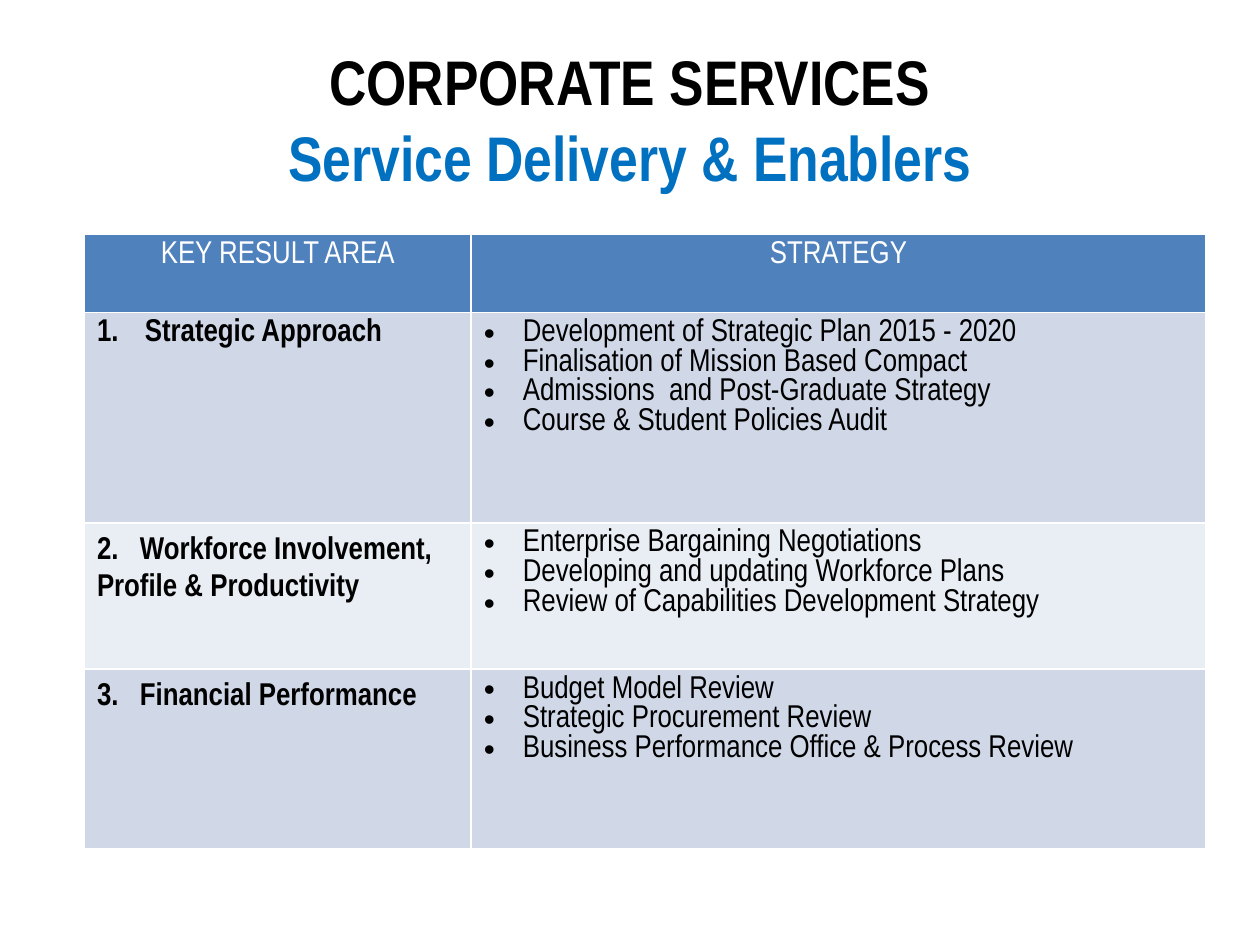
from lxml.etree import SubElement
from pptx import Presentation
from pptx.dml.color import RGBColor
from pptx.enum.text import MSO_ANCHOR, PP_ALIGN
from pptx.oxml.ns import qn
from pptx.util import Inches, Pt

FONT = "Arial Narrow"
TITLE = [("CORPORATE SERVICES", "000000"), ("Service Delivery & Enablers", "0070C0")]
HEADERS = ["KEY RESULT AREA", "STRATEGY"]
AREAS = [
    ("Strategic Approach", [
        "Development of Strategic Plan 2015 - 2020",
        "Finalisation of Mission Based Compact",
        "Admissions  and Post-Graduate Strategy",
        "Course & Student Policies Audit",
    ]),
    ("2.\tWorkforce Involvement, Profile & Productivity", [
        "Enterprise Bargaining Negotiations",
        "Developing and updating Workforce Plans",
        "Review of Capabilities Development Strategy",
    ]),
    ("3.\tFinancial Performance", [
        "Budget Model Review",
        "Strategic Procurement Review",
        "Business Performance Office & Process Review",
    ]),
]
COL_WIDTHS = [3.07, 5.83]
ROW_HEIGHTS = [0.62, 1.67, 1.16, 1.43]
HEADER_FILL = "4F81BD"
BAND_FILLS = ["D0D8E8", "E9EDF4"]


def rgb(value):
    return RGBColor.from_string(value)


def style(p, size, color, bold=False):
    for r in p.runs:
        r.font.name = FONT
        r.font.size = Pt(size)
        r.font.bold = bold
        r.font.color.rgb = rgb(color)


def add_marker(p, indent, tag, **attrs):
    pPr = p._p.get_or_add_pPr()
    pPr.set("marL", str(Inches(indent)))
    pPr.set("indent", str(-Inches(indent)))
    if tag == "a:buChar":
        SubElement(pPr, qn("a:buFont"), typeface="Arial")
    SubElement(pPr, qn(tag), **attrs)


def add_tab(p, pos):
    tabs = SubElement(p._p.get_or_add_pPr(), qn("a:tabLst"))
    SubElement(tabs, qn("a:tab"), pos=str(Inches(pos)), algn="l")


def fill_cell(cell, color):
    cell.fill.solid()
    cell.fill.fore_color.rgb = rgb(color)


def add_title(s):
    tf = s.shapes.add_textbox(Inches(0.75), Inches(0.19), Inches(8.5), Inches(1.5)).text_frame
    tf.word_wrap = True
    tf.vertical_anchor = MSO_ANCHOR.MIDDLE
    tf.text = "\n".join(text for text, _ in TITLE)
    for p, (_, color) in zip(tf.paragraphs, TITLE):
        p.alignment = PP_ALIGN.CENTER
        style(p, 36, color, True)


def add_area(cell, text):
    p = cell.text_frame.paragraphs[0]
    p.text = text
    if "\t" in text:
        add_tab(p, 0.34)
        p.line_spacing = 1.25
    else:
        add_marker(p, 0.38, "a:buAutoNum", type="arabicPeriod")
    style(p, 18, "000000", True)


def add_strategies(cell, items):
    cell.text_frame.text = "\n".join(items)
    for p in cell.text_frame.paragraphs:
        add_marker(p, 0.31, "a:buChar", char="•")
        style(p, 18, "000000")


def add_areas_table(s):
    table = s.shapes.add_table(len(ROW_HEIGHTS), len(COL_WIDTHS), Inches(0.67), Inches(1.86),
                               Inches(sum(COL_WIDTHS)), Inches(sum(ROW_HEIGHTS))).table
    for col, width in zip(table.columns, COL_WIDTHS):
        col.width = Inches(width)
    for row, height in zip(table.rows, ROW_HEIGHTS):
        row.height = Inches(height)
    for cell, text in zip(table.rows[0].cells, HEADERS):
        fill_cell(cell, HEADER_FILL)
        p = cell.text_frame.paragraphs[0]
        p.text = text
        p.alignment = PP_ALIGN.CENTER
        style(p, 18, "FFFFFF")
    for i, (area, strategies) in enumerate(AREAS):
        left, right = table.rows[i + 1].cells
        for cell in (left, right):
            fill_cell(cell, BAND_FILLS[i % 2])
        add_area(left, area)
        add_strategies(right, strategies)


def main():
    """Build the corporate services slide."""
    prs = Presentation()
    prs.slide_width, prs.slide_height = Inches(10), Inches(7.5)
    s = prs.slides.add_slide(prs.slide_layouts[6])
    add_title(s)
    add_areas_table(s)
    prs.save("out.pptx")


if __name__ == "__main__":
    main()
